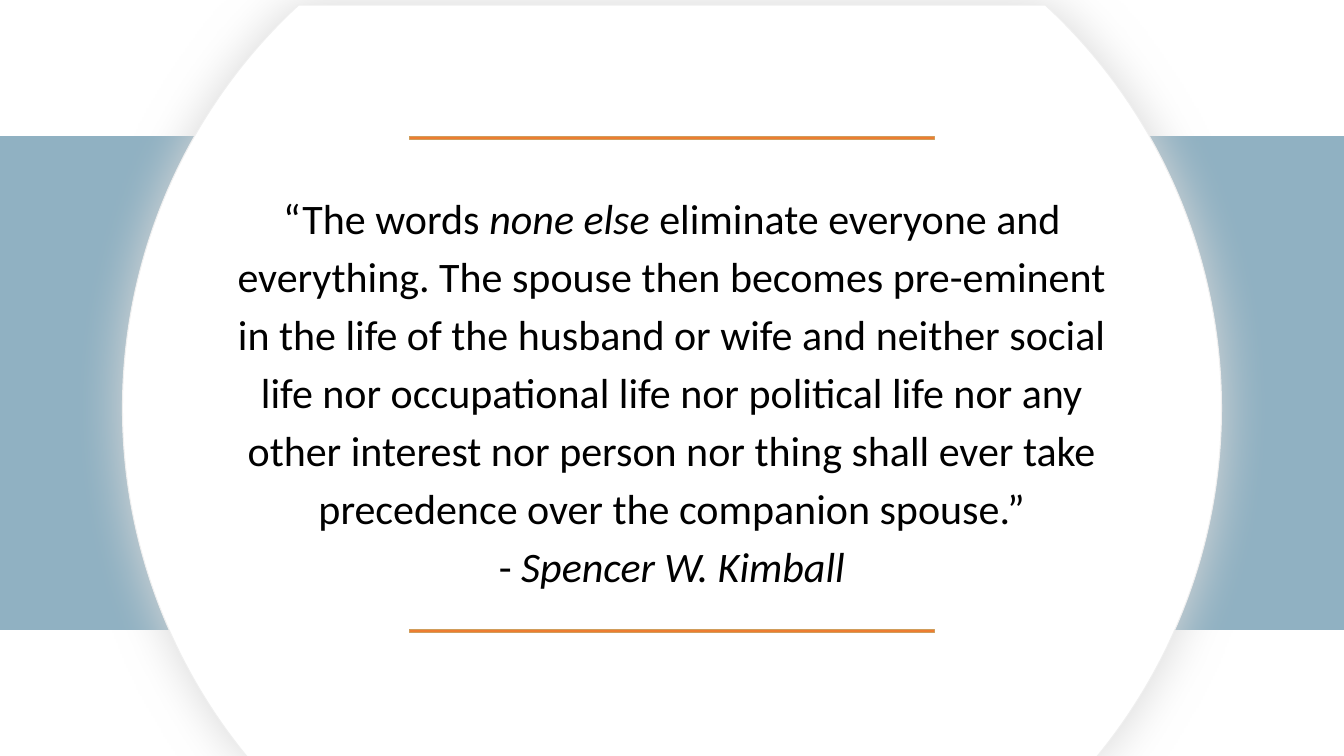
from dataclasses import dataclass
from math import asin, cos, pi, sin, tan

from lxml import etree
from pptx import Presentation
from pptx.dml.color import RGBColor
from pptx.enum.shapes import MSO_SHAPE
from pptx.enum.text import MSO_ANCHOR, PP_ALIGN
from pptx.oxml.ns import qn
from pptx.util import Inches, Pt

RECT = MSO_SHAPE.RECTANGLE
MIDDLE = MSO_ANCHOR.MIDDLE
CENTER = PP_ALIGN.CENTER


@dataclass(frozen=True)
class Theme:
    font: str = "Calibri"
    size: float = 30
    line: float = 0.75
    ink: str = "000000"
    paper: str = "FFFFFF"
    band: str = "90B1C2"
    rim: str = "EFEFEF"
    glow: str = "D8D8D8"
    rule: str = "ED7D31"
    edge: str = "D09D5C"


def add_text(para, text, font, size, color, italic=False):
    run = para.add_run()
    run.text = text
    run.font.name = font
    run.font.size = Pt(size)
    run.font.italic = italic
    run.font.color.rgb = RGBColor.from_string(color)


class Page:
    """Places elements by percent of the slide's width and height."""

    def __init__(self, deck, theme):
        self.theme = theme
        self.wide, self.high = deck.slide_width, deck.slide_height
        self.slide = deck.slides.add_slide(deck.slide_layouts[6])
        fill = self.slide.background.fill
        fill.solid()
        fill.fore_color.rgb = RGBColor.from_string(theme.paper)

    def x(self, share):
        return round(self.wide * share / 100)

    def y(self, share):
        return round(self.high * share / 100)

    def box(self, left, top, width, height):
        return self.x(left), self.y(top), self.x(width), self.y(height)

    def paint(self, shape, fill, line):
        shape.shadow.inherit = False
        shape.fill.solid()
        shape.fill.fore_color.rgb = RGBColor.from_string(fill)
        shape.line.color.rgb = RGBColor.from_string(line)
        shape.line.width = Pt(self.theme.line)

    def bar(self, *area, fill, line):
        shape = self.slide.shapes.add_shape(RECT, *self.box(*area))
        self.paint(shape, fill, line)

    def disc(self, mid, radius, top, foot):
        """Draw a circle cut flat at the top and foot."""
        cx, cy, r = self.x(50), self.y(mid), self.y(radius)
        start = asin((self.y(top) - cy) / r)
        end = asin((self.y(foot) - cy) / r)
        turns = [start, 0, end, pi - end, pi, pi - start]

        def spot(turn, lean=0):
            """Point on the circle, moved along its tangent by lean radii."""
            return (round(cx + r * (cos(turn) - lean * sin(turn))),
                    round(cy + r * (sin(turn) + lean * cos(turn))))

        dots = [spot(turn) for turn in turns]
        pen = self.slide.shapes.build_freeform(*dots[0])
        pen.add_line_segments(dots[1:], close=True)
        shape = pen.convert_to_shape()

        # Bend the side lines into arcs; the foot line stays straight
        lines = list(shape.element.iter(qn("a:lnTo")))
        for i in (0, 1, 3, 4):
            a, b = turns[i:i + 2]
            lean = 4 / 3 * tan((b - a) / 4)
            curve = etree.Element(qn("a:cubicBezTo"))
            for px, py in (spot(a, lean), spot(b, -lean), spot(b)):
                etree.SubElement(curve, qn("a:pt"), x=str(px - shape.left),
                                 y=str(py - shape.top))
            lines[i].getparent().replace(lines[i], curve)

        self.paint(shape, self.theme.paper, self.theme.rim)
        self.glow(shape, blur=36)

    def glow(self, shape, blur):
        effects = shape.element.spPr.find(qn("a:effectLst"))
        shade = etree.SubElement(effects, qn("a:outerShdw"), blurRad=str(Pt(blur)),
                                 dist="0", dir="0", algn="ctr", rotWithShape="0")
        etree.SubElement(shade, qn("a:srgbClr"), val=self.theme.glow)

    def quote(self, *area, paras, base):
        frame = self.slide.shapes.add_textbox(*self.box(*area)).text_frame
        frame.word_wrap = True
        frame.vertical_anchor = MIDDLE
        frame.margin_bottom = self.y(base)
        look = self.theme
        for i, runs in enumerate(paras):
            para = frame.add_paragraph() if i else frame.paragraphs[0]
            para.alignment = CENTER
            para.line_spacing = 1.15
            for text, italic in runs:
                add_text(para, text, font=look.font, size=look.size,
                         color=look.ink, italic=italic)


QUOTE = [
    [("“The words ", False), ("none else", True),
     (" eliminate everyone and everything. The spouse then becomes "
      "pre-eminent in the life of the husband or wife and neither social "
      "life nor occupational life nor political life nor any other interest "
      "nor person nor thing shall ever take precedence over the companion "
      "spouse.”", False)],
    [("- ", False), ("Spencer W. Kimball", True)],
]


def main():
    deck = Presentation()
    deck.slide_width, deck.slide_height = Inches(13.33), Inches(7.5)
    theme = Theme()
    page = Page(deck, theme)
    top, foot = 18, 83.33

    # Band and cut circle
    page.bar(0, top, 100, foot - top, fill=theme.band, line=theme.band)
    page.disc(mid=54, radius=72.67, top=0.67, foot=100.67)

    # Quotation
    page.quote(15.5, 22, 69, 64, paras=QUOTE, base=6)

    # Rules above and below
    for level in (top, foot):
        page.bar(30.5, level, 39, 0.4, fill=theme.rule, line=theme.edge)

    deck.save("out.pptx")


if __name__ == "__main__":
    main()
